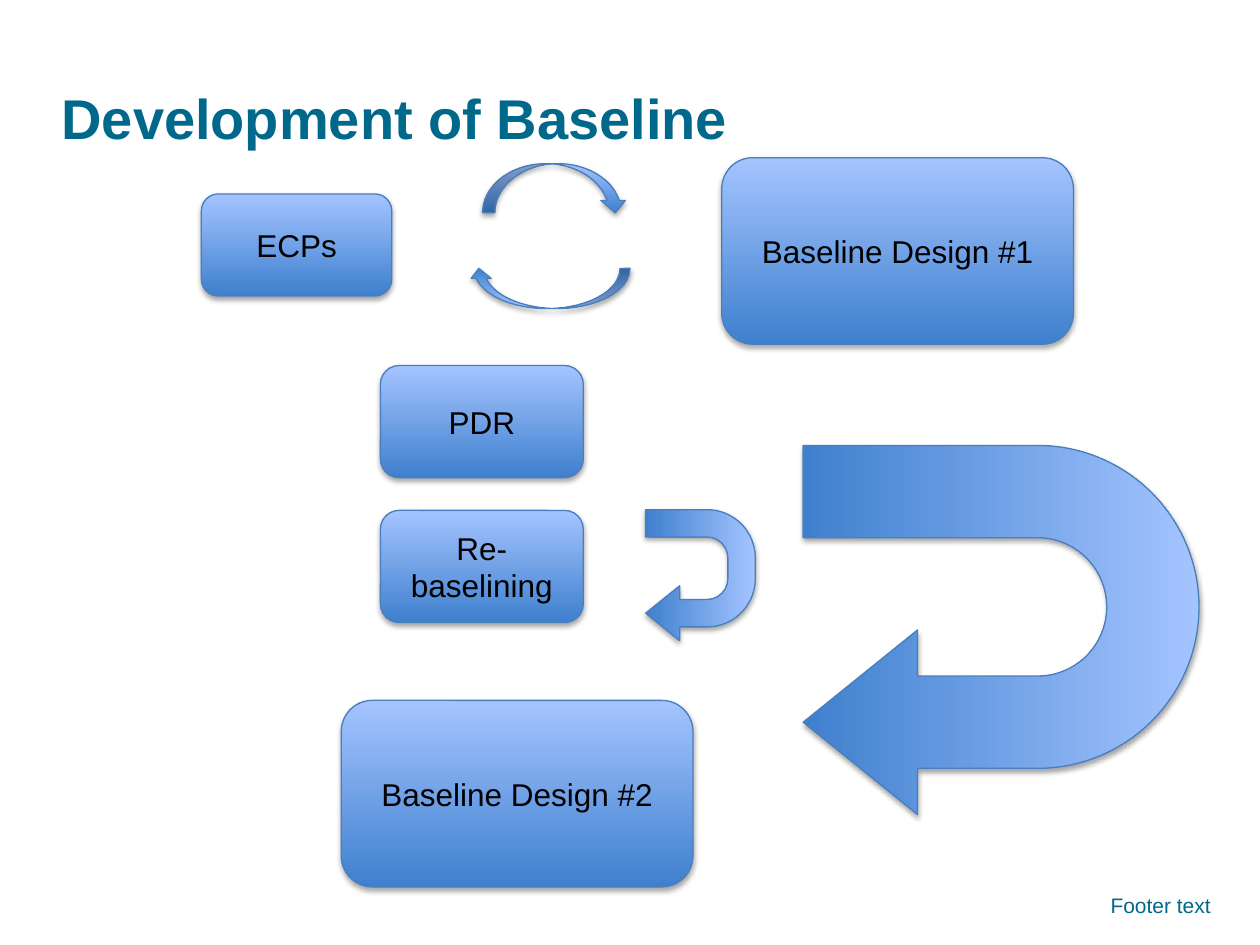
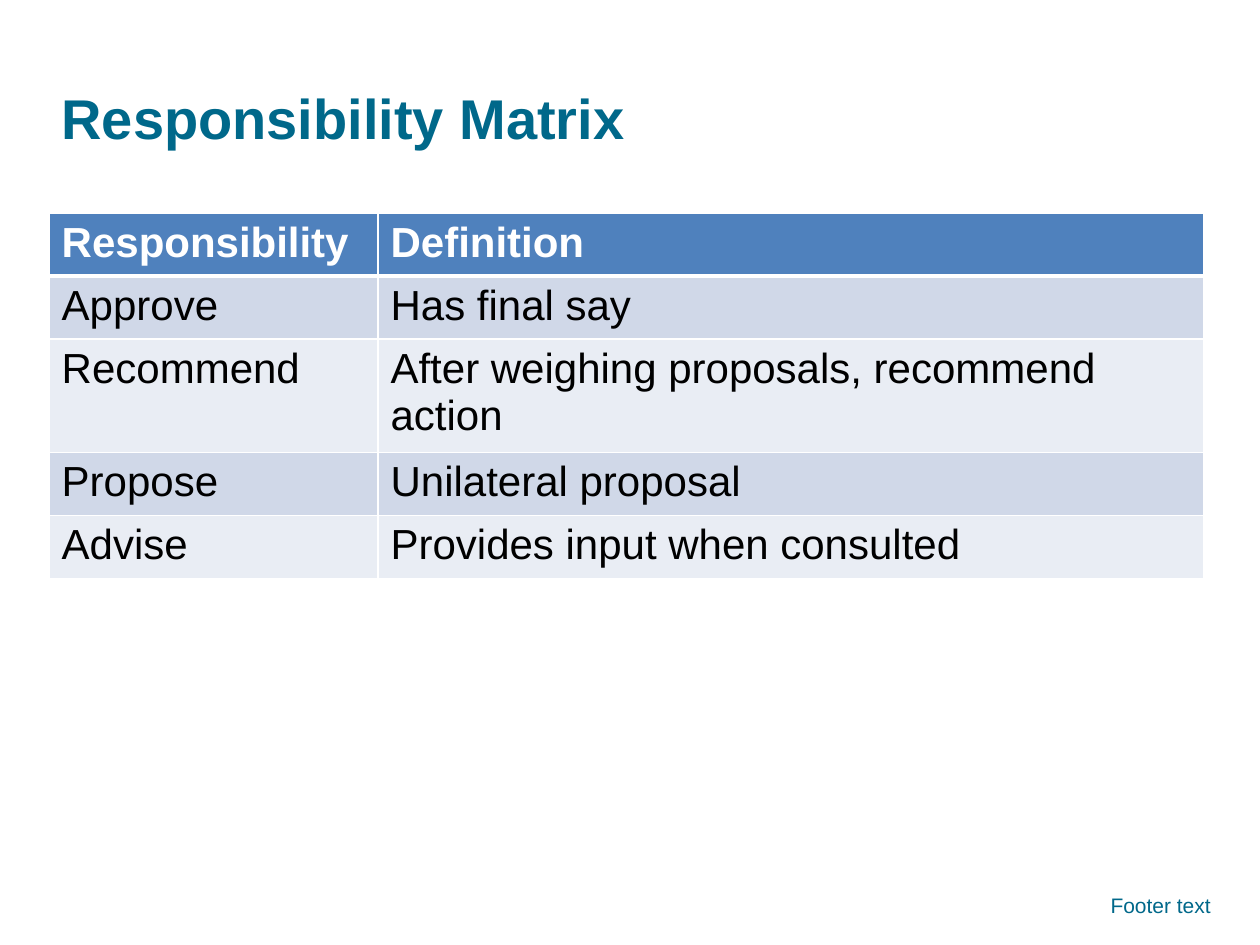
from lxml import etree
from pptx import Presentation
from pptx.dml.color import RGBColor
from pptx.enum.shapes import MSO_SHAPE
from pptx.enum.text import MSO_ANCHOR, PP_ALIGN
from pptx.oxml.ns import qn
from pptx.util import Cm, Pt

ROUNDED = MSO_SHAPE.ROUNDED_RECTANGLE
CURVED_ARROW = MSO_SHAPE.CURVED_DOWN_ARROW
UTURN_ARROW = MSO_SHAPE.U_TURN_ARROW
TOP, MIDDLE = MSO_ANCHOR.TOP, MSO_ANCHOR.MIDDLE
LEFT, CENTER, RIGHT = PP_ALIGN.LEFT, PP_ALIGN.CENTER, PP_ALIGN.RIGHT

FONT = "Arial"
TEAL = RGBColor(0x00, 0x68, 0x8A)
BLACK = RGBColor(0x00, 0x00, 0x00)
WHITE = RGBColor(0xFF, 0xFF, 0xFF)
GRADIENT_DARK = RGBColor(0x3F, 0x80, 0xCE)
GRADIENT_LIGHT = RGBColor(0xA4, 0xC4, 0xFF)
OUTLINE = RGBColor(0x4B, 0x7E, 0xBC)
HEADER_FILL = RGBColor(0x4F, 0x81, 0xBD)
BAND_FILLS = (RGBColor(0xE9, 0xED, 0xF4), RGBColor(0xD0, 0xD8, 0xE8))

# Boxes are left, top, width, height in centimetres.
TITLE_BOX = (0.99, 1.5, 17.42, 1.73)
FOOTER_BOX = (16.61, 17.86, 8.05, 1.02)
DIAGRAM_BOX = (4.06, 3.18, 20.1, 14.7)
TABLE_BOX = (0.99, 4.29, 23.27, 5.2)

DESIGN_SIZE = (7.09, 3.76)
REVIEW_SIZE = (4.09, 2.26)
REVIEW_LEFT = 3.61
# Label, left, top (from the diagram's corner), size
STEPS = [
    ("Baseline Design #1", 10.49, 0, DESIGN_SIZE),
    ("ECPs", 0, 0.73, (3.84, 2.06)),
    ("PDR", REVIEW_LEFT, 4.19, REVIEW_SIZE),
    ("Re-baselining", REVIEW_LEFT, 7.11, REVIEW_SIZE),
    ("Baseline Design #2", 2.82, 10.94, DESIGN_SIZE),
]
# Preset, left, top (from the diagram's corner), size, rotation
ARROWS = [
    (CURVED_ARROW, 5.67, 0.12, (2.92, 0.99), 0),
    (CURVED_ARROW, 5.39, 2.23, (3.25, 0.81), 180),
    (UTURN_ARROW, 12.4, 5.53, (7.44, 7.98), 90),
    (UTURN_ARROW, 8.74, 7.31, (2.64, 2.21), 90),
]
UTURN_ADJUSTMENTS = (0.25, 0.25, 0.31, 0.44, 1)

RESPONSIBILITIES = [
    ("Responsibility", "Definition"),
    ("Approve", "Has final say"),
    ("Recommend", "After weighing proposals, recommend action"),
    ("Propose", "Unilateral proposal"),
    ("Advise", "Provides input when consulted"),
]
FIRST_COLUMN_WIDTH = 6.63


def write(text_frame, text, size, color, bold=False, align=LEFT, anchor=TOP):
    text_frame.word_wrap = True
    text_frame.vertical_anchor = anchor
    paragraph = text_frame.paragraphs[0]
    paragraph.alignment = align
    run = paragraph.add_run()
    run.text = text
    run.font.name = FONT
    run.font.size = Pt(size)
    run.font.bold = bold
    run.font.color.rgb = color


def add_text(slide, box, text, size, **style):
    text_box = slide.shapes.add_textbox(*map(Cm, box))
    write(text_box.text_frame, text, size, TEAL, **style)


def add_framed_slide(presentation, title):
    """Add a slide with the shared title and footer."""
    slide = presentation.slides.add_slide(presentation.slide_layouts[6])
    add_text(slide, TITLE_BOX, title, 32, bold=True, anchor=MIDDLE)
    add_text(slide, FOOTER_BOX, "Footer text", 12, align=RIGHT)
    return slide


def add_shadow(shape):
    shape.shadow.inherit = False
    effects = shape._element.spPr.find(qn("a:effectLst"))
    shadow = etree.SubElement(effects, qn("a:outerShdw"), blurRad=str(Pt(3.1)),
                              dist=str(Pt(1.8)), dir="5400000", rotWithShape="0")
    color = etree.SubElement(shadow, qn("a:srgbClr"), val=str(BLACK))
    etree.SubElement(color, qn("a:alpha"), val="35000")


def add_glossy_shape(slide, preset, left, top, size):
    shape = slide.shapes.add_shape(preset, *map(Cm, (left, top, *size)))
    shape.fill.gradient()
    shape.fill.gradient_angle = 90
    for stop, color in zip(shape.fill.gradient_stops, (GRADIENT_DARK, GRADIENT_LIGHT)):
        stop.color.rgb = color
    shape.line.color.rgb = OUTLINE
    shape.line.width = Pt(0.75)
    add_shadow(shape)
    return shape


def add_baseline_diagram(slide, box):
    left, top = box[:2]
    for label, x, y, size in STEPS:
        step = add_glossy_shape(slide, ROUNDED, left + x, top + y, size)
        write(step.text_frame, label, 18, BLACK, align=CENTER, anchor=MIDDLE)
    for preset, x, y, size, rotation in ARROWS:
        arrow = add_glossy_shape(slide, preset, left + x, top + y, size)
        arrow.rotation = rotation
        if preset == UTURN_ARROW:
            for index, value in enumerate(UTURN_ADJUSTMENTS):
                arrow.adjustments[index] = value


def set_borders(cell, top_width, bottom_width):
    properties = cell._tc.get_or_add_tcPr()
    widths = {"lnL": 1, "lnR": 1, "lnT": top_width, "lnB": bottom_width}
    for side, width in widths.items():
        line = etree.SubElement(properties, qn(f"a:{side}"), w=str(Pt(width)))
        fill = etree.SubElement(line, qn("a:solidFill"))
        etree.SubElement(fill, qn("a:srgbClr"), val=str(WHITE))


def add_responsibility_table(slide, box):
    width = box[2]
    table = slide.shapes.add_table(len(RESPONSIBILITIES), 2, *map(Cm, box)).table
    table.columns[0].width = Cm(FIRST_COLUMN_WIDTH)
    table.columns[1].width = Cm(width - FIRST_COLUMN_WIDTH)
    for row, texts in enumerate(RESPONSIBILITIES):
        header = row == 0
        for column, text in enumerate(texts):
            cell = table.cell(row, column)
            set_borders(cell, 3 if row == 1 else 1, 3 if header else 1)
            cell.fill.solid()
            cell.fill.fore_color.rgb = HEADER_FILL if header else BAND_FILLS[row % 2]
            write(cell.text_frame, text, 24, WHITE if header else BLACK, bold=header)


def main():
    presentation = Presentation()
    presentation.slide_width, presentation.slide_height = Cm(25.4), Cm(19.05)
    add_baseline_diagram(
        add_framed_slide(presentation, "Development of Baseline"), DIAGRAM_BOX)
    add_responsibility_table(
        add_framed_slide(presentation, "Responsibility Matrix"), TABLE_BOX)
    presentation.save("out.pptx")


if __name__ == "__main__":
    main()
